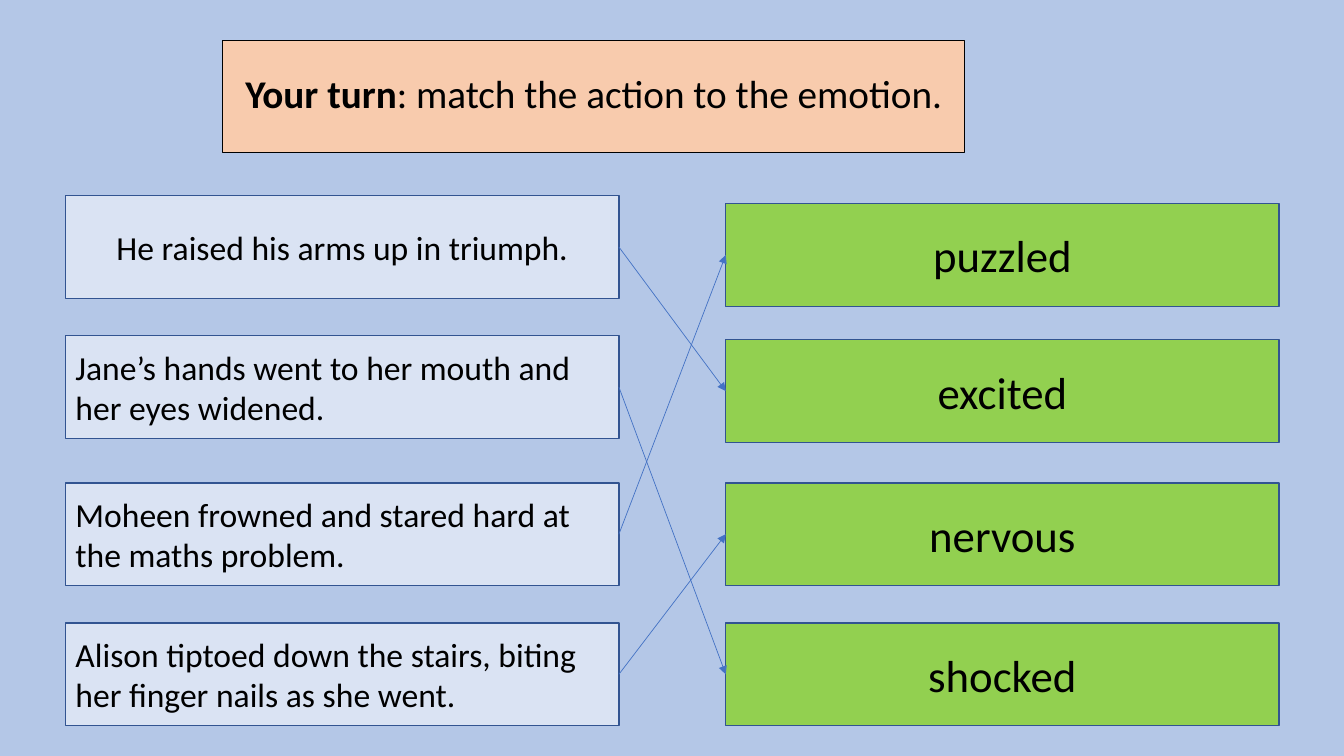
from dataclasses import dataclass

from lxml.etree import SubElement
from pptx import Presentation
from pptx.dml.color import RGBColor
from pptx.enum.shapes import MSO_CONNECTOR, MSO_SHAPE
from pptx.enum.text import MSO_ANCHOR, PP_ALIGN
from pptx.oxml.ns import qn
from pptx.shapes.autoshape import Shape
from pptx.slide import Slide
from pptx.util import Pt

COLORS = {
    "background": "B4C7E7",
    "title": "F8CBAD",
    "action": "DAE3F3",
    "emotion": "92D050",
    "border": "325491",
    "arrow": "4472C4",
    "black": "000000",
}
ACTION_LEFT, EMOTION_LEFT = 46.8, 518.4
CARD_WIDTH, CARD_HEIGHT = 395.28, 73.44
RIGHT_SIDE, LEFT_SIDE = 3, 1


@dataclass
class Action:
    text: str
    top: float
    emotion: str
    align: PP_ALIGN = PP_ALIGN.LEFT


@dataclass
class Emotion:
    text: str
    top: float


ACTIONS = [
    Action("He raised his arms up in triumph.", 139.68, "excited", PP_ALIGN.CENTER),
    Action("Jane’s hands went to her mouth and her eyes widened.", 239.76, "shocked"),
    Action("Moheen frowned and stared hard at the maths problem.", 344.88, "puzzled"),
    Action("Alison tiptoed down the stairs, biting her finger nails as she went.",
           444.96, "nervous"),
]
EMOTIONS = [
    Emotion("puzzled", 145.44),
    Emotion("excited", 242.64),
    Emotion("nervous", 344.88),
    Emotion("shocked", 444.96),
]


def color(name: str) -> RGBColor:
    return RGBColor.from_string(COLORS[name])


def add_box(slide: Slide, left: float, top: float, width: float, height: float,
            fill: str, border: str = "border", border_width: float = 1) -> Shape:
    shape = slide.shapes.add_shape(
        MSO_SHAPE.RECTANGLE, Pt(left), Pt(top), Pt(width), Pt(height))
    shape.shadow.inherit = False
    shape.fill.solid()
    shape.fill.fore_color.rgb = color(fill)
    shape.line.color.rgb = color(border)
    shape.line.width = Pt(border_width)
    return shape


def add_text(shape: Shape, text: str, *, size: float, bold: bool = False,
             align: PP_ALIGN = PP_ALIGN.CENTER, line_spacing: float = 1.0) -> None:
    """Append a run to the first paragraph of the shape."""
    frame = shape.text_frame
    frame.word_wrap = True
    frame.vertical_anchor = MSO_ANCHOR.MIDDLE
    paragraph = frame.paragraphs[0]
    paragraph.alignment = align
    paragraph.line_spacing = line_spacing
    run = paragraph.add_run()
    run.text = text
    run.font.name = "Calibri"
    run.font.size = Pt(size)
    run.font.bold = bold
    run.font.color.rgb = color("black")


def add_arrow(slide: Slide, start: Shape, end: Shape) -> None:
    connector = slide.shapes.add_connector(MSO_CONNECTOR.STRAIGHT, 0, 0, 0, 0)
    connector.begin_connect(start, RIGHT_SIDE)
    connector.end_connect(end, LEFT_SIDE)
    connector.line.color.rgb = color("arrow")
    connector.line.width = Pt(0.5)
    properties = connector.element.spPr
    SubElement(properties.find(qn("a:ln")), qn("a:tailEnd"), type="triangle")
    SubElement(properties, qn("a:effectLst"))


def main() -> None:
    presentation = Presentation()
    presentation.slide_width, presentation.slide_height = Pt(960), Pt(540)
    slide = presentation.slides.add_slide(presentation.slide_layouts[6])
    slide.background.fill.solid()
    slide.background.fill.fore_color.rgb = color("background")

    # Title
    title = add_box(slide, 159.12, 28.8, 529.92, 79.92, "title", "black", 0.75)
    add_text(title, "Your turn", size=28, bold=True, line_spacing=0.9)
    add_text(title, ": match the action to the emotion.", size=28, line_spacing=0.9)

    # Actions on the left
    action_boxes: list[Shape] = []
    for action in ACTIONS:
        box = add_box(slide, ACTION_LEFT, action.top, CARD_WIDTH, CARD_HEIGHT, "action")
        add_text(box, action.text, size=24, align=action.align)
        action_boxes.append(box)

    # Emotions on the right
    emotion_boxes: dict[str, Shape] = {}
    for emotion in EMOTIONS:
        box = add_box(slide, EMOTION_LEFT, emotion.top, CARD_WIDTH, CARD_HEIGHT, "emotion")
        add_text(box, emotion.text, size=32)
        emotion_boxes[emotion.text] = box

    # Matching arrows
    for action, box in zip(ACTIONS, action_boxes):
        add_arrow(slide, box, emotion_boxes[action.emotion])

    presentation.save("out.pptx")


if __name__ == "__main__":
    main()
